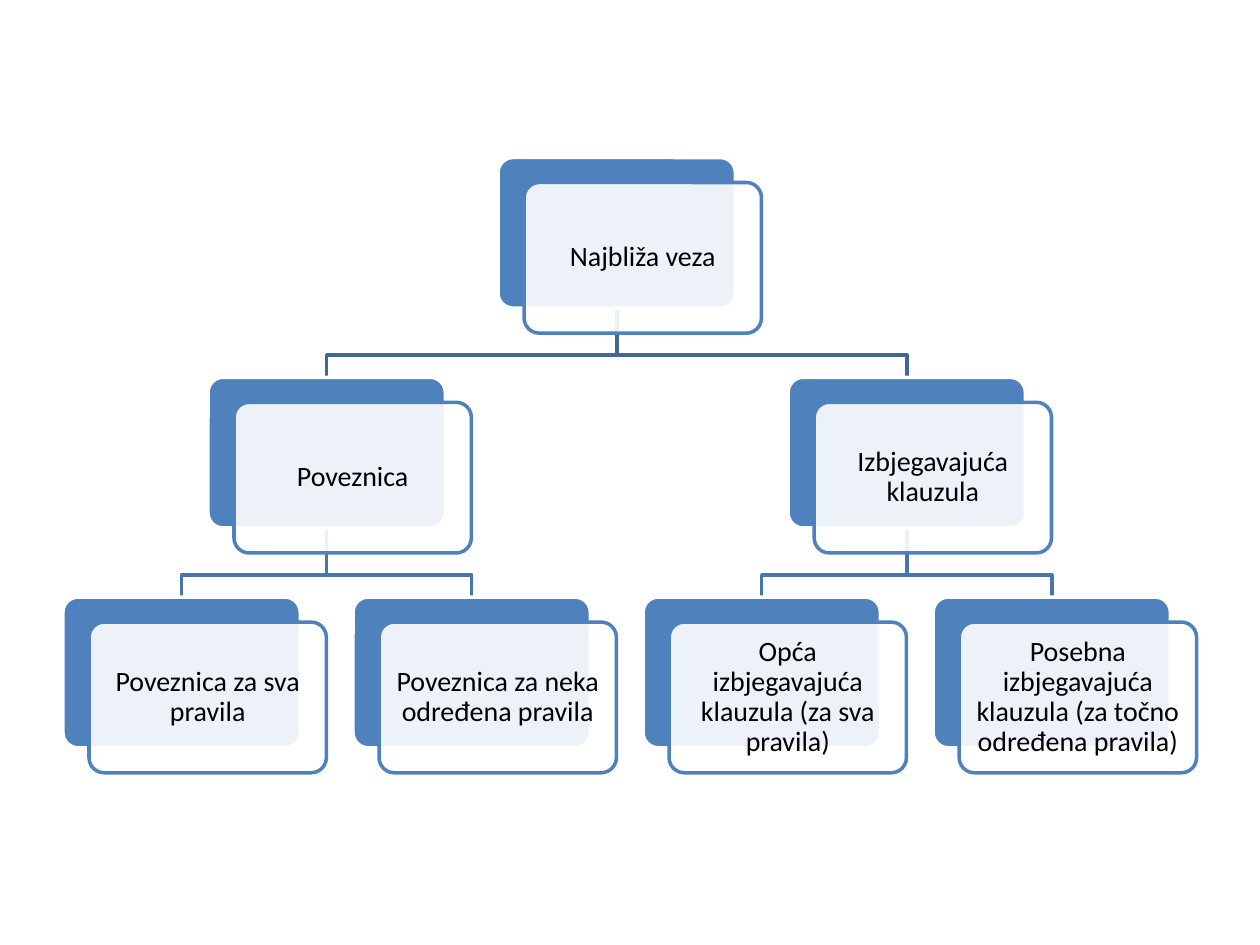
from dataclasses import dataclass

import lxml.etree
import pptx
import pptx.dml.color
import pptx.enum.shapes
import pptx.enum.text
import pptx.oxml.ns
import pptx.util

Pt = pptx.util.Pt
RGB = pptx.dml.color.RGBColor


@dataclass(frozen=True)
class Theme:
    blue: RGB = RGB.from_string("4F81BD")
    white: RGB = RGB.from_string("FFFFFF")
    text: RGB = RGB.from_string("000000")
    # Connector colour by the level of the parent
    connectors: tuple = (RGB.from_string("3F6797"), RGB.from_string("4875AC"))
    card_opacity: int = 90
    font: str = "Calibri"
    size: float = 16
    line: float = 2


@dataclass(frozen=True)
class Node:
    text: str
    column: float  # in leaf columns
    level: int
    children: tuple = ()

    @property
    def left(self) -> float:
        return FIRST_LEFT + self.column * COLUMN_PITCH

    @property
    def top(self) -> float:
        return FIRST_TOP + self.level * LEVEL_PITCH

    @property
    def center(self) -> float:
        return self.left + CARD_WIDTH / 2

    @property
    def bottom(self) -> float:
        return self.top + CARD_HEIGHT


THEME = Theme()

# Grid, in points
FIRST_LEFT, FIRST_TOP = 36, 90
COLUMN_PITCH, LEVEL_PITCH = 165.75, 125.6
CARD_WIDTH, CARD_HEIGHT = 135.6, 86.1
OFFSET_X, OFFSET_Y = 14.9, 14.3
ELBOW_DROP = 26.9
INSET = 4.8

TREE = Node("Najbliža veza", 1.5, 0, (
    Node("Poveznica", 0.5, 1, (
        Node("Poveznica za sva pravila", 0, 2),
        Node("Poveznica za neka određena pravila", 1, 2),
    )),
    Node("Izbjegavajuća klauzula", 2.5, 1, (
        Node("Opća izbjegavajuća klauzula (za sva pravila)", 2, 2),
        Node("Posebna izbjegavajuća klauzula (za točno određena pravila)", 3, 2),
    )),
))


def set_opacity(shape, percent: int) -> None:
    color = shape.fill._xPr.find(".//" + pptx.oxml.ns.qn("a:srgbClr"))
    alpha = lxml.etree.SubElement(color, pptx.oxml.ns.qn("a:alpha"))
    alpha.set("val", str(percent * 1000))


def add_elbow(slide, parent: Node, child: Node) -> None:
    """Stepped line from the bottom of the parent to the top of the child."""
    middle = parent.bottom + ELBOW_DROP
    builder = slide.shapes.build_freeform(Pt(parent.center), Pt(parent.bottom))
    corners = [(parent.center, middle), (child.center, middle), (child.center, child.top)]
    builder.add_line_segments([(Pt(x), Pt(y)) for x, y in corners], close=False)
    shape = builder.convert_to_shape()
    shape.shadow.inherit = False
    shape.fill.background()
    shape.line.color.rgb = THEME.connectors[parent.level]
    shape.line.width = Pt(THEME.line)


def add_card(slide, left: float, top: float, fill: RGB, line: RGB):
    shape = slide.shapes.add_shape(
        pptx.enum.shapes.MSO_SHAPE.ROUNDED_RECTANGLE,
        Pt(left), Pt(top), Pt(CARD_WIDTH), Pt(CARD_HEIGHT))
    shape.adjustments[0] = 0.1
    shape.shadow.inherit = False
    shape.fill.solid()
    shape.fill.fore_color.rgb = fill
    shape.line.color.rgb = line
    shape.line.width = Pt(THEME.line)
    return shape


def write_label(shape, text: str) -> None:
    frame = shape.text_frame
    frame.word_wrap = True
    frame.vertical_anchor = pptx.enum.text.MSO_ANCHOR.MIDDLE
    frame.margin_left = frame.margin_right = Pt(INSET)
    frame.margin_top = frame.margin_bottom = Pt(INSET)
    frame.text = text
    paragraph = frame.paragraphs[0]
    paragraph.alignment = pptx.enum.text.PP_ALIGN.CENTER
    paragraph.line_spacing = 0.9
    font = paragraph.runs[0].font
    font.name = THEME.font
    font.size = Pt(THEME.size)
    font.color.rgb = THEME.text


def draw_connectors(slide, node: Node) -> None:
    for child in node.children:
        add_elbow(slide, node, child)
        draw_connectors(slide, child)


def draw_cards(slide, node: Node) -> None:
    add_card(slide, node.left, node.top, THEME.blue, THEME.white)
    front = add_card(slide, node.left + OFFSET_X, node.top + OFFSET_Y,
                     THEME.white, THEME.blue)
    set_opacity(front, THEME.card_opacity)
    write_label(front, node.text)
    for child in node.children:
        draw_cards(slide, child)


def main() -> None:
    presentation = pptx.Presentation()
    presentation.slide_width, presentation.slide_height = Pt(720), Pt(540)
    # The slide has no title, so the blank layout is used
    slide = presentation.slides.add_slide(presentation.slide_layouts[6])
    # Connectors lie behind all cards
    draw_connectors(slide, TREE)
    draw_cards(slide, TREE)
    presentation.save("out.pptx")


if __name__ == "__main__":
    main()
